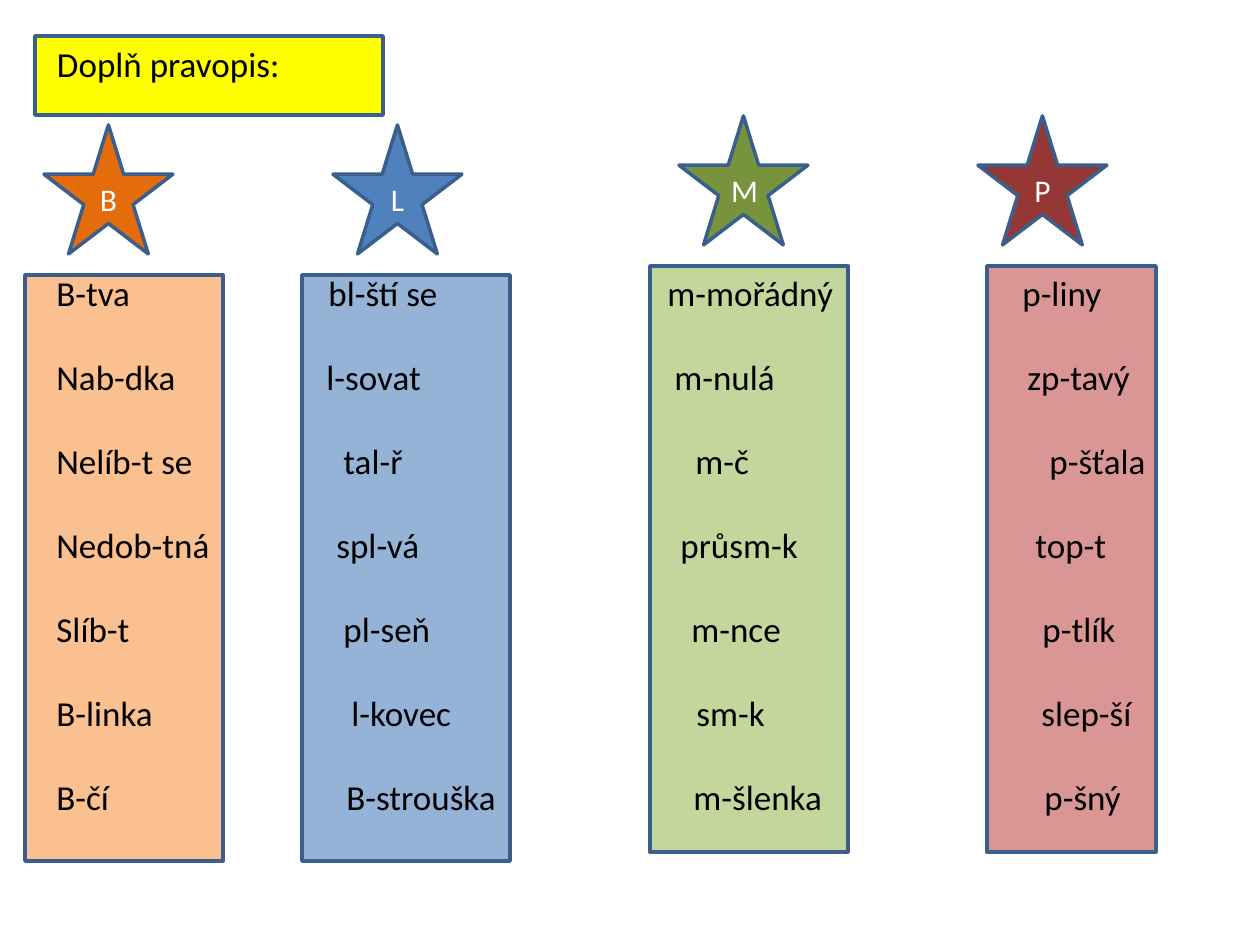
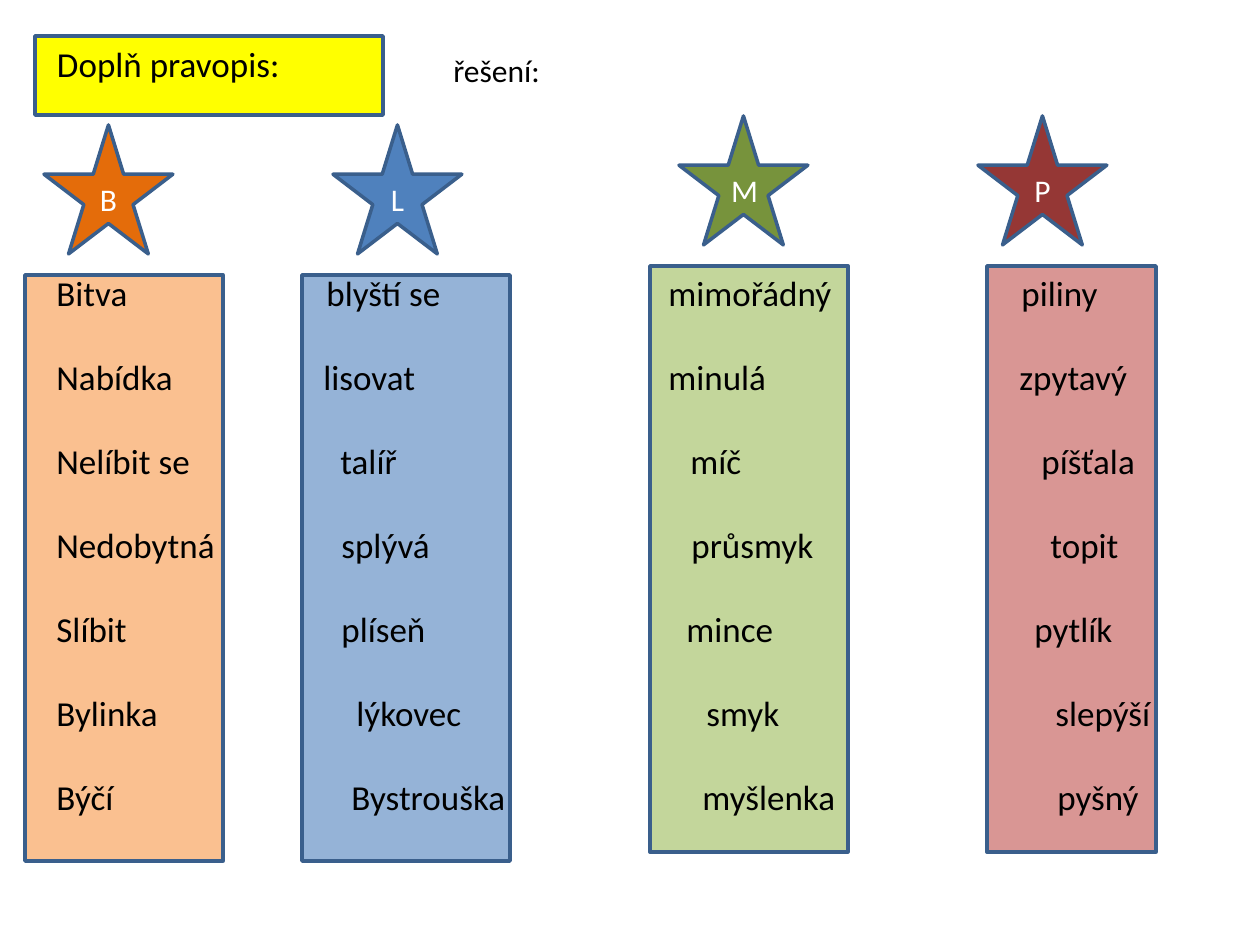
from lxml.etree import SubElement
from pptx import Presentation
from pptx.dml.color import RGBColor as Rgb
from pptx.enum.shapes import MSO_SHAPE as Preset
from pptx.enum.text import MSO_ANCHOR as Anchor, MSO_AUTO_SIZE as Fit, PP_ALIGN as Align
from pptx.oxml.ns import qn
from pptx.util import Emu, Pt

EMU_PER_PX = 914400 / 126
TEXT_INDENT = 57

COLORS = {
    "outline": "3A5F8C", "heading": "FFFF00", "ink": "000000", "white": "FFFFFF",
    "B": "E46C0A", "B panel": "FAC090",
    "L": "4F81BD", "L panel": "95B3D7",
    "M": "77933C", "M panel": "C3D69B",
    "P": "953735", "P panel": "D99694",
}

LETTERS = [
    ("B", 44, 125, 25, 198),
    ("L", 333, 125, 302, 208),
    ("M", 679, 116, 650, 198),
    ("P", 978, 116, 987, 169),
]
STAR_SIZE = 129
STAR_TO_PANEL = 150
PANEL_HEIGHT = 586

EXERCISE = [
    (("B-tva", "bl-ští se", "m-mořádný", "p-liny"), (329, 668, 1023)),
    (("Nab-dka", "l-sovat", "m-nulá", "zp-tavý"), (327, 675, 1028)),
    (("Nelíb-t se", "tal-ř", "m-č", "p-šťala"), (344, 696, 1050)),
    (("Nedob-tná", "spl-vá", "průsm-k", "top-t"), (337, 681, 1036)),
    (("Slíb-t", "pl-seň", "m-nce", "p-tlík"), (344, 692, 1043)),
    (("B-linka", "l-kovec", "sm-k", "slep-ší"), (352, 697, 1042)),
    (("B-čí", "B-strouška", "m-šlenka", "p-šný"), (347, 694, 1045)),
]
SOLUTION = [
    (("Bitva", "blyští se", "mimořádný", "piliny"), (327, 669, 1022)),
    (("Nabídka", "lisovat", "minulá", "zpytavý"), (324, 669, 1020)),
    (("Nelíbit se", "talíř", "míč", "píšťala"), (341, 691, 1042)),
    (("Nedobytná", "splývá", "průsmyk", "topit"), (342, 692, 1051)),
    (("Slíbit", "plíseň", "mince", "pytlík"), (342, 687, 1035)),
    (("Bylinka", "lýkovec", "smyk", "slepýší"), (357, 707, 1056)),
    (("Býčí", "Bystrouška", "myšlenka", "pyšný"), (352, 703, 1058)),
]


def px(length):
    return Emu(round(length * EMU_PER_PX))


def apply(target, values):
    for name, value in values.items():
        setattr(target, name, value)


class Worksheet:
    font = "Calibri"

    def __init__(self, deck):
        self.deck = deck
        self.slide = None

    def new_slide(self):
        self.slide = self.deck.slides.add_slide(self.deck.slide_layouts[5])

    def paint(self, shape, color):
        shape.fill.solid()
        shape.fill.fore_color.rgb = Rgb.from_string(COLORS[color])
        shape.line.color.rgb = Rgb.from_string(COLORS["outline"])
        shape.line.width = Pt(2)

    def add_text(self, paragraph, text, size, color="ink"):
        run = paragraph.add_run()
        run.text = text
        apply(run.font, {"name": self.font, "size": Pt(size)})
        run.font.color.rgb = Rgb.from_string(COLORS[color])

    def title(self, text, left, top, width, height):
        heading = self.slide.shapes.title
        apply(heading, {"left": px(left), "top": px(top),
                        "width": px(width), "height": px(height)})
        self.paint(heading, "heading")
        frame = heading.text_frame
        apply(frame, {"auto_size": Fit.NONE, "vertical_anchor": Anchor.TOP,
                      "margin_left": px(TEXT_INDENT - left), "margin_top": px(6)})
        frame.paragraphs[0].alignment = Align.LEFT
        self.add_text(frame.paragraphs[0], text, 20)

    def shape(self, preset, color, left, top, width, height):
        drawn = self.slide.shapes.add_shape(preset, px(left), px(top), px(width), px(height))
        drawn.shadow.inherit = False
        self.paint(drawn, color)
        return drawn

    def star(self, letter, left, top):
        star = self.shape(Preset.STAR_5_POINT, letter, left, top, STAR_SIZE, STAR_SIZE)
        star.text_frame.vertical_anchor = Anchor.MIDDLE
        paragraph = star.text_frame.paragraphs[0]
        paragraph.alignment = Align.CENTER
        self.add_text(paragraph, letter, 18, "white")

    def text_frame(self, left, top, width, height):
        frame = self.slide.shapes.add_textbox(px(left), px(top), px(width), px(height)).text_frame
        frame.word_wrap = True
        return frame

    def label(self, text, left, top, width, height):
        self.add_text(self.text_frame(left, top, width, height).paragraphs[0], text, 18)

    def word_rows(self, rows, left, top, width, height):
        frame = self.text_frame(left, top, width, height)
        for index, (words, starts) in enumerate(rows):
            paragraph = frame.add_paragraph() if index else frame.paragraphs[0]
            paragraph.space_after = Pt(24)
            self.add_text(paragraph, "\t".join(words), 20)
            stops = SubElement(paragraph._p.get_or_add_pPr(), qn("a:tabLst"))
            for start in starts:
                SubElement(stops, qn("a:tab"), pos=str(px(start - TEXT_INDENT)), algn="l")


def build_page(sheet, rows):
    sheet.new_slide()
    sheet.title("Doplň pravopis:", 35, 36, 348, 79)
    for letter, _, star_top, panel_left, panel_width in LETTERS:
        sheet.shape(Preset.RECTANGLE, f"{letter} panel", panel_left,
                    star_top + STAR_TO_PANEL, panel_width, PANEL_HEIGHT)
    sheet.word_rows(rows, 44, 265, 1181, 598)
    for letter, star_left, star_top, _, _ in LETTERS:
        sheet.star(letter, star_left, star_top)


def main():
    deck = Presentation()
    apply(deck, {"slide_width": px(1260), "slide_height": px(945)})
    sheet = Worksheet(deck)
    build_page(sheet, EXERCISE)
    build_page(sheet, SOLUTION)
    sheet.label("řešení:", 441, 45, 169, 50)
    deck.save("out.pptx")


if __name__ == "__main__":
    main()
